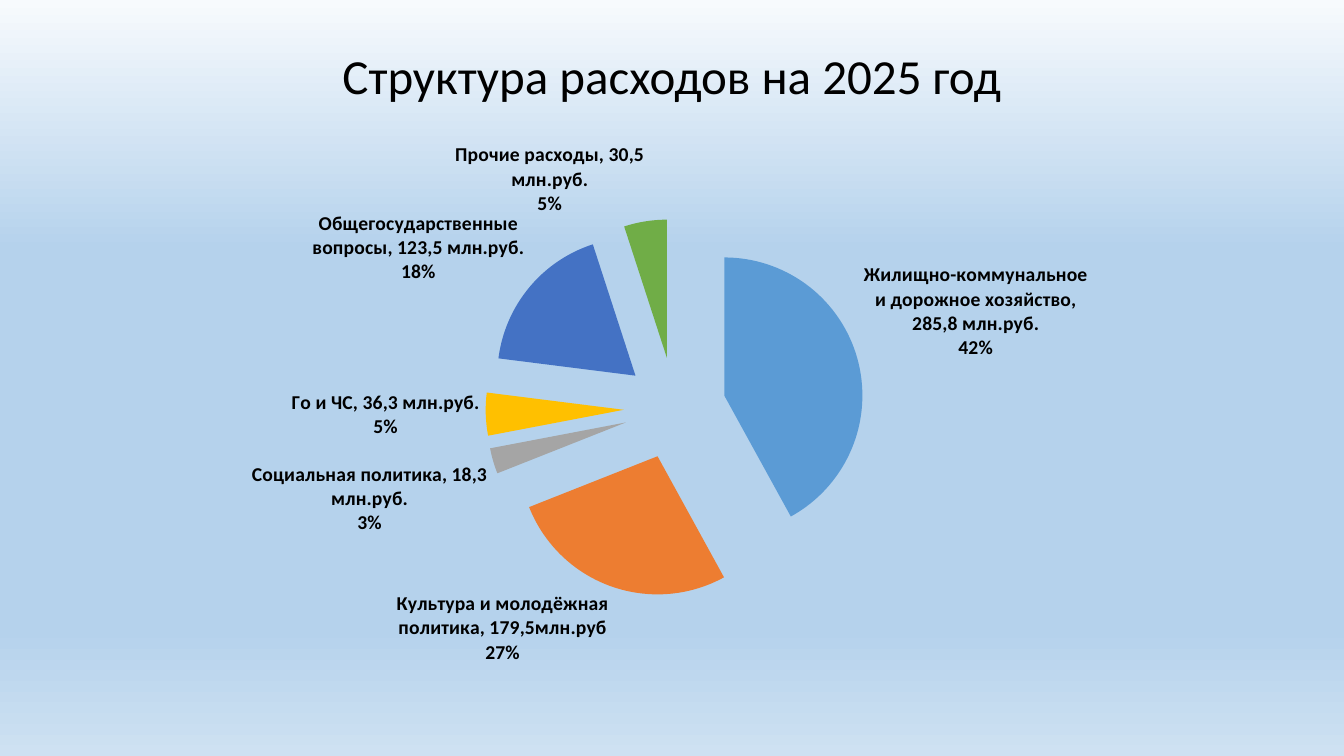
from dataclasses import dataclass

from lxml import etree
from pptx import Presentation
from pptx.chart.data import CategoryChartData
from pptx.dml.color import RGBColor
from pptx.enum.chart import XL_CHART_TYPE, XL_LABEL_POSITION
from pptx.enum.text import MSO_ANCHOR, PP_ALIGN
from pptx.oxml import parse_xml
from pptx.oxml.ns import nsdecls, qn
from pptx.util import Pt

PIE = XL_CHART_TYPE.PIE
OUTSIDE_END = XL_LABEL_POSITION.OUTSIDE_END
MIDDLE = MSO_ANCHOR.MIDDLE
CENTER = PP_ALIGN.CENTER
TITLE_ONLY = 5


@dataclass(frozen=True)
class Theme:
    font: str = "Calibri"
    text: str = "000000"
    title_size: int = 35
    label_size: int = 14
    chart_size: int = 10
    background: tuple = ((0, "F7FAFD"), (33, "B5D2EC"), (83, "B5D2EC"), (100, "CEE1F2"))
    slices: tuple = ("5B9BD5", "ED7D31", "A5A5A5", "FFC000", "4472C4", "70AD47")


THEME = Theme()
SLIDE_SIZE = (960, 540)
TITLE_BOX = (66, 28.8, 828, 54.7)
CHART_BOX = (51.8, 91.4, 855.4, 394.6)
PLOT_LAYOUT = {"x": 0.345, "y": 0.165, "w": 0.316, "h": 0.685}
EXPLOSION = 37

EXPENSES = {
    "Жилищно-коммунальное и дорожное хозяйство, 285,8 млн.руб.": 42,
    "Культура и молодёжная политика, 179,5млн.руб": 27,
    "Социальная политика, 18,3 млн.руб.": 3,
    "Го и ЧС, 36,3 млн.руб.": 5,
    "Общегосударственные вопросы, 123,5 млн.руб.": 18,
    "Прочие расходы, 30,5 млн.руб.": 5,
}


def set_attributes(target, values):
    for name, value in values.items():
        setattr(target, name, value)


def format_font(font, size, bold=False):
    set_attributes(font, {"name": THEME.font, "size": Pt(size), "bold": bold})
    font.color.rgb = RGBColor.from_string(THEME.text)


def paint_background(slide):
    fill = slide.background.fill
    fill.gradient()
    fill.gradient_angle = 270
    stops = next(slide.background._cSld.iter(qn("a:gsLst")))
    for stop in list(stops):
        stops.remove(stop)
    for position, color in THEME.background:
        stop = etree.SubElement(stops, qn("a:gs"), pos=str(position * 1000))
        etree.SubElement(stop, qn("a:srgbClr"), val=color)


def place_title(slide, box, text):
    title = slide.shapes.title
    left, top, width, height = map(Pt, box)
    set_attributes(title, {"left": left, "top": top, "width": width, "height": height})
    set_attributes(title.text_frame, {"text": text, "word_wrap": True, "vertical_anchor": MIDDLE})
    paragraph = title.text_frame.paragraphs[0]
    set_attributes(paragraph, {"alignment": CENTER, "line_spacing": 0.9})
    format_font(paragraph.runs[0].font, THEME.title_size)


def explosion_element():
    return parse_xml(f'<c:explosion {nsdecls("c")} val="{EXPLOSION}"/>')


def color_slices(series):
    series.format.line.fill.background()
    series._element.find(qn("c:spPr")).addnext(explosion_element())
    for index, color in enumerate(THEME.slices):
        point_format = series.points[index].format
        point_format.fill.solid()
        point_format.fill.fore_color.rgb = RGBColor.from_string(color)
        point_format.line.fill.background()
    for point in series._element.findall(qn("c:dPt")):
        point.find(qn("c:spPr")).addprevious(explosion_element())


def label_slices(plot):
    plot.has_data_labels = True
    labels = plot.series[0].data_labels
    set_attributes(labels, {
        "show_category_name": True,
        "show_percentage": True,
        "show_value": False,
        "show_legend_key": False,
        "position": OUTSIDE_END,
    })
    format_font(labels.font, THEME.label_size, bold=True)
    separator = parse_xml(f'<c:separator {nsdecls("c")}>\n</c:separator>')
    labels._element.find(qn("c:showBubbleSize")).addnext(separator)


def position_plot(chart):
    plot_area = chart._chartSpace.chart.plotArea
    for layout in plot_area.findall(qn("c:layout")):
        plot_area.remove(layout)
    layout = etree.Element(qn("c:layout"))
    manual = etree.SubElement(layout, qn("c:manualLayout"))
    settings = {"layoutTarget": "inner", "xMode": "edge", "yMode": "edge", **PLOT_LAYOUT}
    for name, value in settings.items():
        etree.SubElement(manual, qn(f"c:{name}"), val=str(value))
    plot_area.insert(0, layout)


def place_expense_chart(slide, box):
    data = CategoryChartData()
    data.categories = list(EXPENSES)
    data.add_series("Series 1", list(EXPENSES.values()))
    chart = slide.shapes.add_chart(PIE, *map(Pt, box), data).chart
    set_attributes(chart, {"has_title": False, "has_legend": False})
    format_font(chart.font, THEME.chart_size)
    plot = chart.plots[0]
    plot.vary_by_categories = True
    color_slices(plot.series[0])
    label_slices(plot)
    position_plot(chart)


def main():
    presentation = Presentation()
    width, height = map(Pt, SLIDE_SIZE)
    set_attributes(presentation, {"slide_width": width, "slide_height": height})
    slide = presentation.slides.add_slide(presentation.slide_layouts[TITLE_ONLY])
    paint_background(slide)
    place_title(slide, TITLE_BOX, "Структура расходов на 2025 год")
    place_expense_chart(slide, CHART_BOX)
    presentation.save("out.pptx")


if __name__ == "__main__":
    main()
